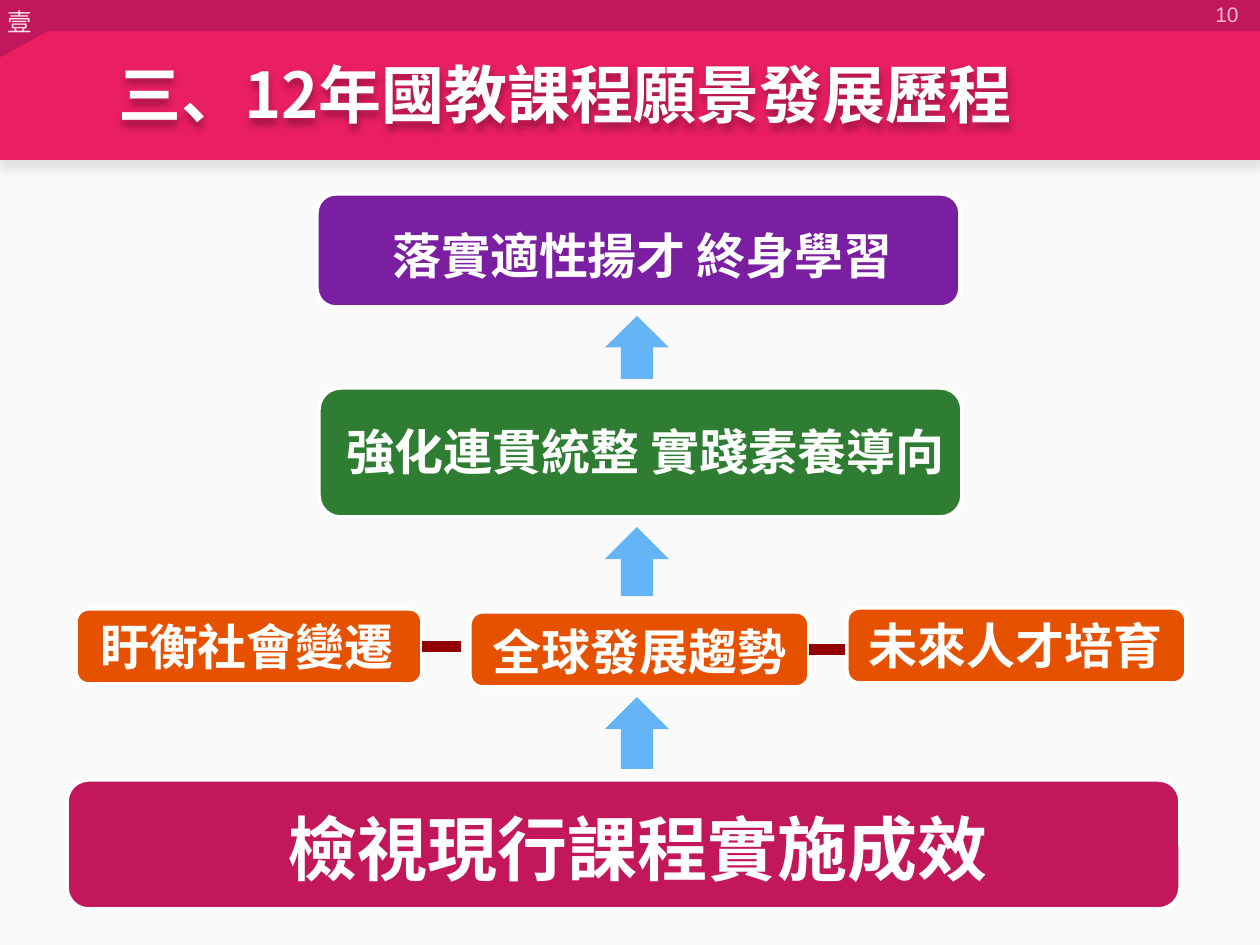
from lxml import etree
from pptx import Presentation
from pptx.dml.color import RGBColor
from pptx.enum.shapes import MSO_CONNECTOR, MSO_SHAPE
from pptx.enum.text import MSO_ANCHOR, PP_ALIGN
from pptx.oxml.ns import qn
from pptx.util import Emu, Pt

SCALE = 914400 / 126  # EMU in one px
CJK = "Noto Sans CJK SC"
INK = {
    "page": "FAFAFA", "pink": "E91E63", "rose": "C2185B", "blush": "FCE4EC",
    "pale": "F8BBD0", "white": "FFFFFF", "orange": "E65100", "red": "920000",
    "blue": "65B5F6", "green": "2E7D32", "purple": "7B1FA2", "black": "000000",
}


def px(num):
    return Emu(round(num * SCALE))


def rgb(name):
    return RGBColor.from_string(INK[name])


def paint(shape, fill, line=None):
    shape.shadow.inherit = False
    shape.fill.solid()
    shape.fill.fore_color.rgb = rgb(fill)
    if line:
        shape.line.color.rgb = rgb(line)
        shape.line.width = Pt(2)
    else:
        shape.line.fill.background()


def block(slide, kind, area, fill, line=None):
    shape = slide.shapes.add_shape(kind, *map(px, area))
    paint(shape, fill, line)
    return shape


def card(slide, area, fill):
    return block(slide, MSO_SHAPE.ROUNDED_RECTANGLE, area, fill, "white")


def shade(shape, alpha, blur, dist):
    """Soft shadow that falls straight down."""
    shape.shadow.inherit = False
    effect = shape._element.spPr.find(qn("a:effectLst"))
    outer = etree.SubElement(effect, qn("a:outerShdw"), blurRad=str(Pt(blur)),
                             dist=str(Pt(dist)), dir="5400000",
                             algn="t", rotWithShape="0")
    color = etree.SubElement(outer, qn("a:srgbClr"), val=INK["black"])
    etree.SubElement(color, qn("a:alpha"), val=str(alpha * 1000))


def write(shape, text, size, color="white", bold=True, face=CJK,
          align=PP_ALIGN.LEFT, anchor=MSO_ANCHOR.MIDDLE, wrap=True):
    frame = shape.text_frame
    frame.word_wrap = wrap
    frame.vertical_anchor = anchor
    para = frame.paragraphs[0]
    para.text = text
    para.alignment = align
    font = para.font
    font.size, font.bold, font.name = Pt(size), bold, face
    font.color.rgb = rgb(color)
    props = para._p.pPr.find(qn("a:defRPr"))
    etree.SubElement(props, qn("a:ea"), typeface=face)
    return para


def label(slide, area, text, size, inset=None, **style):
    box = slide.shapes.add_textbox(*map(px, area))
    if inset:
        frame = box.text_frame
        frame.margin_left = frame.margin_right = px(inset)
        frame.margin_top = frame.margin_bottom = px(inset)
    return box, write(box, text, size, **style)


def link(slide, card, end):
    """Bar from the right side of a card to the px column end."""
    mid = card.top + card.height // 2
    bar = slide.shapes.add_connector(MSO_CONNECTOR.STRAIGHT,
                                     card.left + card.width, mid, px(end), mid)
    bar.begin_connect(card, 3)
    bar.line.color.rgb = rgb("red")
    bar.line.width = Pt(6)
    etree.SubElement(bar._element.spPr, qn("a:effectLst"))


def arrow(slide, top, high):
    block(slide, MSO_SHAPE.UP_ARROW, (605, top, 64, high), "blue")


def header(slide):
    # Page and banner
    block(slide, MSO_SHAPE.RECTANGLE, (-1, 55, 1263, 890), "page")
    banner = block(slide, MSO_SHAPE.RECTANGLE, (-1, 0, 1262, 160), "pink")
    shade(banner, 10, 6, 4)
    block(slide, MSO_SHAPE.RECTANGLE, (-1, -3, 1262, 34), "rose")

    # Corner fold
    pen = slide.shapes.build_freeform(-1, 31, scale=SCALE)
    pen.add_line_segments([(-1, 58), (48, 31)], close=True)
    paint(pen.convert_to_shape(), "rose")

    # Chapter, page number and title
    label(slide, (-5, 1, 50, 43), "壹", 14, color="blush", bold=False,
          anchor=MSO_ANCHOR.TOP, wrap=False)
    label(slide, (958, -11, 293, 50), "10", 12, color="pale", bold=False,
          face="Arial", align=PP_ALIGN.RIGHT)
    title, _ = label(slide, (106, 26, 1154, 134),
                     "三、12年國教課程願景發展歷程", 36)
    shade(title, 30, 4, 3)


def steps(slide):
    # Three starting points
    social = card(slide, (76, 609, 346, 75), "orange")
    _, para = label(slide, (82, 609, 330, 82), "盱衡社會變遷", 28, 16,
                    align=PP_ALIGN.CENTER)
    para.line_spacing = 0.9
    link(slide, social, 461)

    trend = card(slide, (470, 612, 339, 75), "orange")
    write(trend, "全球發展趨勢", 28, align=PP_ALIGN.CENTER,
          anchor=MSO_ANCHOR.TOP)
    link(slide, trend, 853)

    card(slide, (847, 608, 339, 75), "orange")
    label(slide, (853, 604, 329, 82), "未來人才培育", 28, 16)

    # Base: review of the present courses
    arrow(slide, 697, 72)
    card(slide, (67, 780, 1113, 129), "rose")
    label(slide, (272, 795, 757, 105), "檢視現行課程實施成效", 40, 16)

    # Middle: coherence and literacy
    arrow(slide, 527, 69)
    card(slide, (319, 388, 643, 129), "green")
    label(slide, (330, 393, 648, 116), "強化連貫統整 實踐素養導向", 28, 16)

    # Top: lifelong learning
    arrow(slide, 316, 63)
    card(slide, (317, 194, 643, 113), "purple")
    label(slide, (335, 210, 615, 89), "落實適性揚才 終身學習", 28, 16,
          align=PP_ALIGN.CENTER)


def main():
    deck = Presentation()
    deck.slide_width, deck.slide_height = px(1260), px(945)
    slide = deck.slides.add_slide(deck.slide_layouts[6])
    header(slide)
    steps(slide)
    deck.save("out.pptx")


if __name__ == "__main__":
    main()
